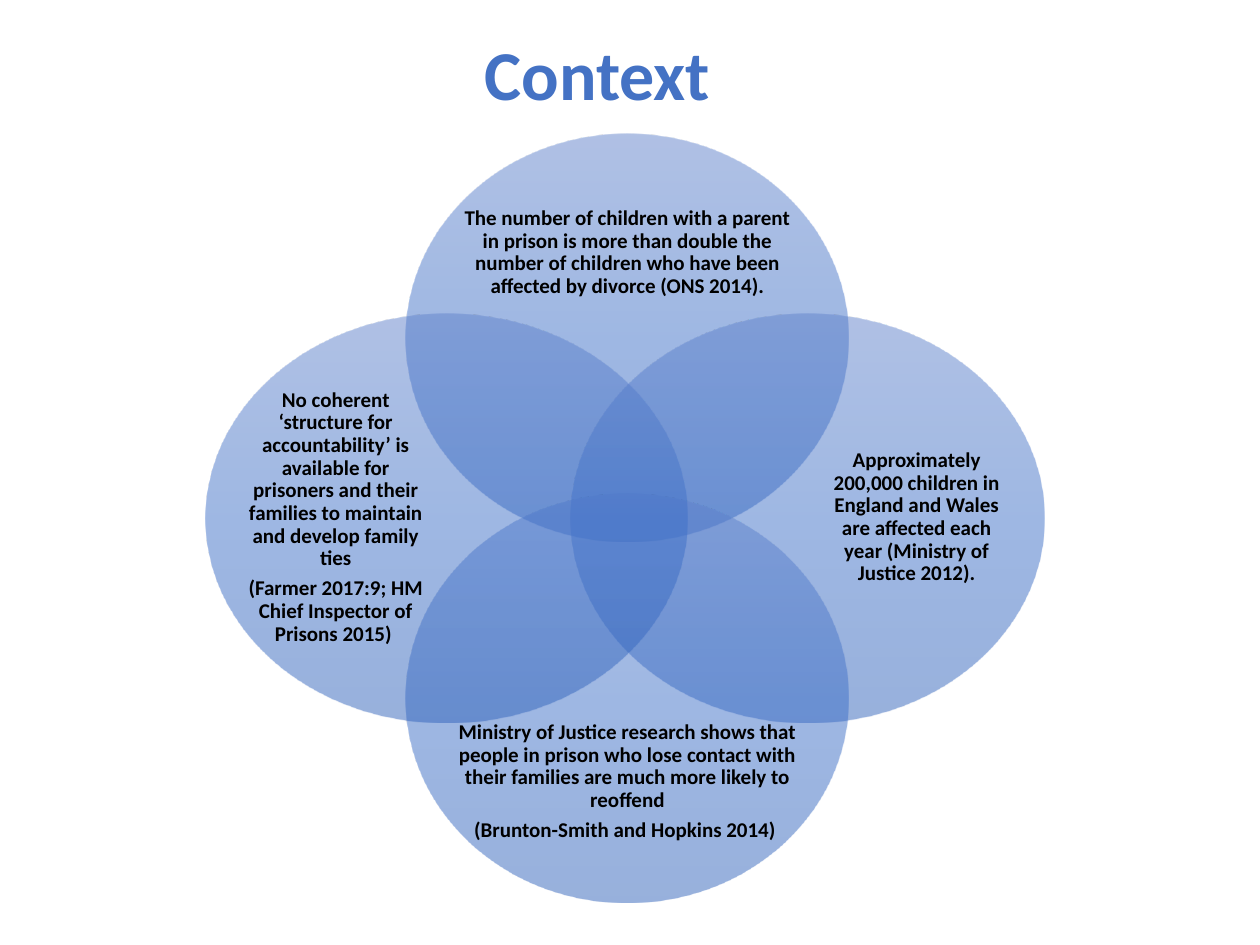
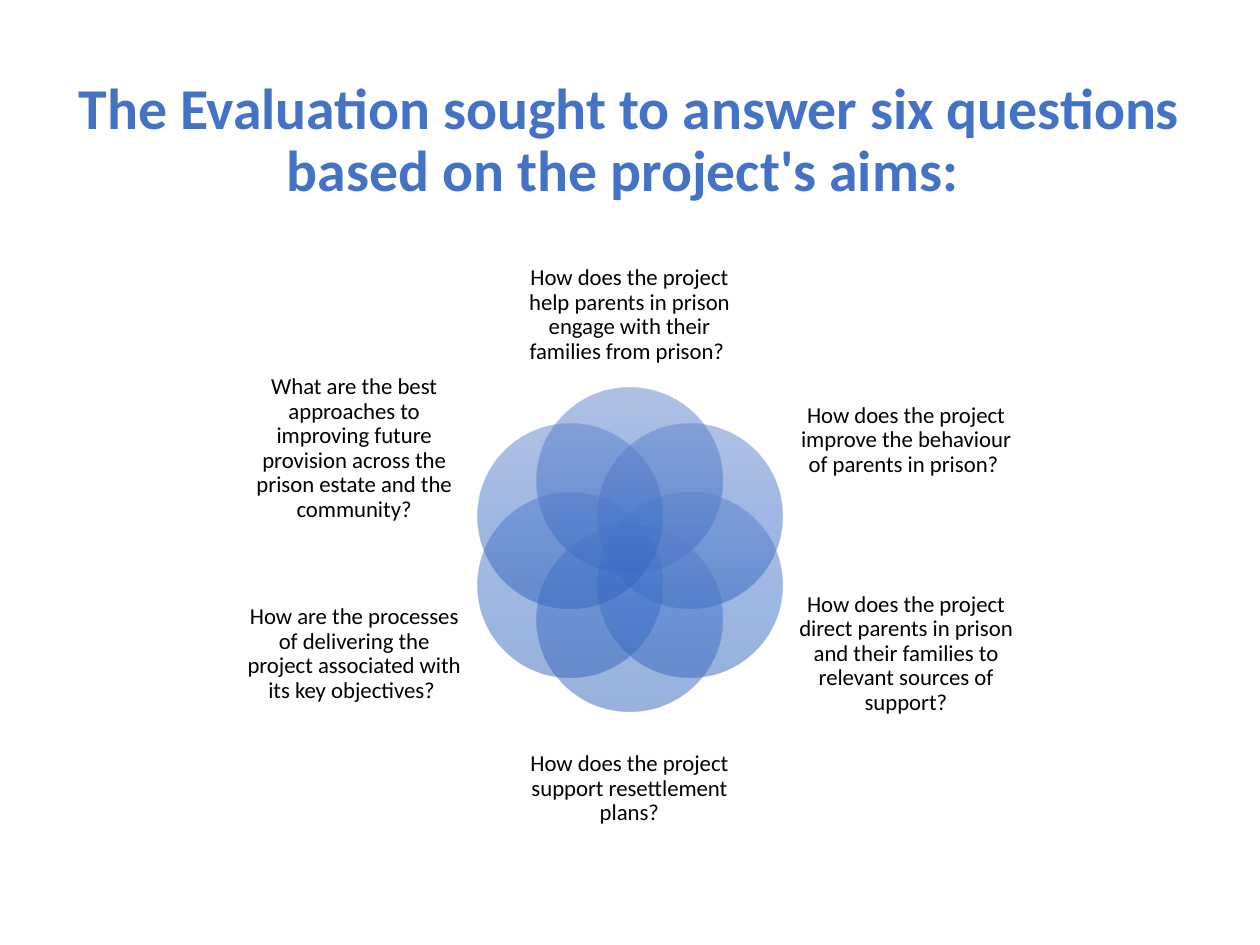
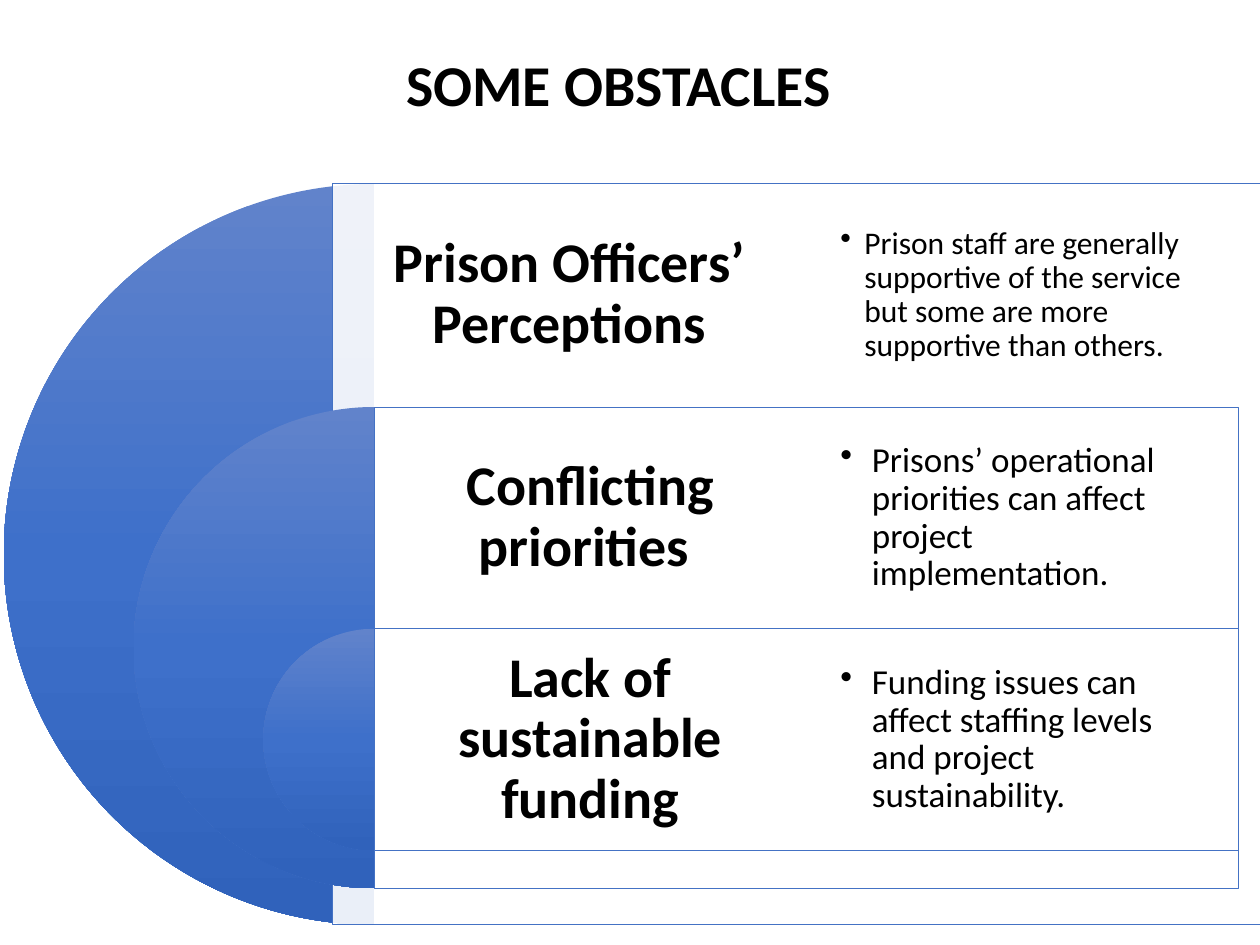
from dataclasses import dataclass
from math import cos, radians, sin

from lxml.etree import SubElement
from pptx import Presentation
from pptx.dml.color import RGBColor
from pptx.enum.shapes import MSO_SHAPE
from pptx.enum.text import MSO_ANCHOR, MSO_AUTO_SIZE, PP_ALIGN
from pptx.oxml.ns import qn
from pptx.shapes.autoshape import Shape
from pptx.slide import Slide
from pptx.text.text import TextFrame
from pptx.util import Pt

EMU_PER_PX = 9144  # 100 px to the inch
TITLE_ONLY = 5


@dataclass(frozen=True)
class Theme:
    font: str = "Calibri"
    accent: str = "4472C4"
    ink: str = "000000"
    panel: str = "FFFFFF"
    gradient: tuple[str, ...] = ("6183CB", "3E70CA", "3062BB")
    petal_opacity: int = 50
    panel_opacity: int = 90
    line_spacing: float = 0.9
    panel_line: float = 0.5
    title_large: int = 40
    title_medium: int = 33
    obstacle: int = 32
    question: int = 13
    fact: int = 12


THEME = Theme()


@dataclass(frozen=True)
class Box:
    left: int
    top: int
    width: int
    height: int

    def emu(self) -> tuple[int, ...]:
        return tuple(px(value) for value in (self.left, self.top, self.width, self.height))


@dataclass(frozen=True)
class Petal:
    """One circle of a Venn diagram with its caption."""
    circle: Box
    caption_box: Box
    paragraphs: tuple[str, ...]


@dataclass(frozen=True)
class Obstacle:
    name: str
    detail: str
    diameter: int
    top: int
    panel_left: int
    panel_width: int
    detail_box: Box
    detail_size: int
    indent: int


FACTS = (
    Petal(Box(322, 106, 351, 324), Box(363, 149, 270, 103), (
        "The number of children with a parent in prison is more than double the number "
        "of children who have been affected by divorce (ONS 2014).",)),
    Petal(Box(453, 249, 376, 324), Box(655, 286, 145, 249), (
        "Approximately 200,000 children in England and Wales are affected each year "
        "(Ministry of Justice 2012).",)),
    Petal(Box(322, 392, 351, 324), Box(363, 569, 270, 103), (
        "Ministry of Justice research shows that people in prison who lose contact with "
        "their families are much more likely to reoffend",
        "(Brunton-Smith and Hopkins 2014) ")),
    Petal(Box(163, 249, 383, 324), Box(193, 286, 147, 249), (
        "No coherent ‘structure for accountability’ is available for prisoners and their "
        "families to maintain and develop family ties",
        "(Farmer 2017:9; HM Chief Inspector of Prisons 2015) ")),
)

# Clockwise from the top
QUESTIONS = (
    (Box(408, 200, 183, 100),
     "How does the project help parents in prison engage with their families from prison? "),
    (Box(632, 295, 174, 109),
     "How does the project improve the behaviour of parents in prison? "),
    (Box(632, 458, 174, 122),
     "How does the project direct parents in prison and their families to relevant "
     "sources of support?"),
    (Box(408, 576, 183, 100), "How does the project support resettlement plans?"),
    (Box(194, 458, 174, 122),
     "How are the processes of delivering the project associated with its key objectives? "),
    (Box(194, 295, 174, 122),
     "What are the best approaches to improving future provision across the prison "
     "estate and the community?"),
)

PIE_CENTRE = 297
DETAIL_LEFT = 640
OBSTACLES = (
    Obstacle("Prison Officers’ Perceptions",
             "Prison staff are generally supportive of the service but some are more "
             "supportive than others.",
             588, 146, 264, 752, Box(DETAIL_LEFT, 136, 343, 197), 18, 19),
    Obstacle("Conflicting priorities ",
             "Prisons’ operational priorities can affect project implementation.",
             382, 323, PIE_CENTRE, 686, Box(DETAIL_LEFT, 323, 343, 176), 20, 25),
    Obstacle("Lack of sustainable funding",
             "Funding issues can affect staffing levels and project sustainability.",
             176, 499, PIE_CENTRE, 686, Box(DETAIL_LEFT, 499, 343, 176), 20, 25),
)


def px(value: int) -> int:
    return value * EMU_PER_PX


def write_text(frame: TextFrame, *paragraphs: str, size: int, color: str = THEME.ink,
               bold: bool = False, align: PP_ALIGN = PP_ALIGN.CENTER,
               space_after: float = 0, bullet_indent: int = 0) -> None:
    """Fill a text frame; space_after is a share of the type size."""
    frame.word_wrap = True
    frame.auto_size = MSO_AUTO_SIZE.NONE
    frame.vertical_anchor = MSO_ANCHOR.MIDDLE
    for index, text in enumerate(paragraphs):
        paragraph = frame.add_paragraph() if index else frame.paragraphs[0]
        paragraph.alignment = align
        paragraph.line_spacing = THEME.line_spacing
        paragraph.space_after = Pt(size * space_after)
        if bullet_indent:
            properties = paragraph._p.get_or_add_pPr()
            properties.set("marL", str(px(bullet_indent)))
            properties.set("indent", str(-px(bullet_indent)))
            SubElement(properties, qn("a:buChar"), char="•")
        run = paragraph.add_run()
        run.text = text
        run.font.name = THEME.font
        run.font.size = Pt(size)
        run.font.bold = bold
        run.font.color.rgb = RGBColor.from_string(color)


def add_text(slide: Slide, box: Box, *paragraphs: str, inset: int = 0, **text_format) -> None:
    frame = slide.shapes.add_textbox(*box.emu()).text_frame
    frame.margin_left = frame.margin_right = px(inset)
    frame.margin_top = frame.margin_bottom = px(inset)
    write_text(frame, *paragraphs, **text_format)


def add_titled_slide(presentation: Presentation, title: str, box: Box, size: int,
                     color: str) -> Slide:
    slide = presentation.slides.add_slide(presentation.slide_layouts[TITLE_ONLY])
    shape = slide.shapes.title
    shape.left, shape.top, shape.width, shape.height = box.emu()
    write_text(shape.text_frame, title, size=size, color=color, bold=True)
    return slide


def set_opacity(color_element, percent: int) -> None:
    SubElement(color_element, qn("a:alpha"), val=str(percent * 1000))


def add_gradient_shape(slide: Slide, kind: MSO_SHAPE, box: Box, opacity: int = 100) -> Shape:
    """Add an unlined shape that shades from top to bottom."""
    shape = slide.shapes.add_shape(kind, *box.emu())
    shape.shadow.inherit = False
    shape.line.fill.background()
    shape.fill.gradient()
    gradient = shape._element.spPr.find(qn("a:gradFill"))
    stops = gradient.find(qn("a:gsLst"))
    for stop in list(stops):
        stops.remove(stop)
    for index, color in enumerate(THEME.gradient):
        stop = SubElement(stops, qn("a:gs"), pos=str(index * 50000))
        color_element = SubElement(stop, qn("a:srgbClr"), val=color)
        if opacity < 100:
            set_opacity(color_element, opacity)
    shape.fill.gradient_angle = 270
    return shape


def add_panel(slide: Slide, box: Box) -> None:
    panel = slide.shapes.add_shape(MSO_SHAPE.RECTANGLE, *box.emu())
    panel.shadow.inherit = False
    panel.fill.solid()
    panel.fill.fore_color.rgb = RGBColor.from_string(THEME.panel)
    fill = panel._element.spPr.find(qn("a:solidFill"))
    set_opacity(fill.find(qn("a:srgbClr")), THEME.panel_opacity)
    panel.line.color.rgb = RGBColor.from_string(THEME.accent)
    panel.line.width = Pt(THEME.panel_line)


def draw_petals(slide: Slide, petals: tuple[Petal, ...], size: int, bold: bool) -> None:
    for petal in petals:
        add_gradient_shape(slide, MSO_SHAPE.OVAL, petal.circle, THEME.petal_opacity)
        add_text(slide, petal.caption_box, *petal.paragraphs, size=size, bold=bold,
                 space_after=0.35)


def question_petals() -> tuple[Petal, ...]:
    """Space the question circles evenly around a ring."""
    centre_x, centre_y, ring, diameter = 500, 437, 55, 147
    petals = []
    for index, (caption_box, question) in enumerate(QUESTIONS):
        angle = radians(index * 360 / len(QUESTIONS) - 90)
        left = round(centre_x + ring * cos(angle) - diameter / 2)
        top = round(centre_y + ring * sin(angle) - diameter / 2)
        petals.append(Petal(Box(left, top, diameter, diameter), caption_box, (question,)))
    return tuple(petals)


def draw_obstacles(slide: Slide) -> None:
    row_height = 176
    for item in OBSTACLES:
        pie_box = Box(PIE_CENTRE - item.diameter // 2, item.top, item.diameter, item.diameter)
        pie = add_gradient_shape(slide, MSO_SHAPE.PIE, pie_box)
        # Left half: from 90 to 270 degrees
        pie.adjustments[0], pie.adjustments[1] = 54, 162
        add_panel(slide, Box(item.panel_left, item.top, item.panel_width, item.diameter))
        name_box = Box(item.panel_left, item.top, DETAIL_LEFT - item.panel_left, row_height)
        add_text(slide, name_box, item.name, inset=13, size=THEME.obstacle, bold=True,
                 space_after=0.35)
    for item in OBSTACLES:
        add_text(slide, item.detail_box, item.detail, inset=27, size=item.detail_size,
                 align=PP_ALIGN.LEFT, space_after=0.15, bullet_indent=item.indent)


def main() -> None:
    presentation = Presentation()
    presentation.slide_width, presentation.slide_height = px(1000), px(750)

    context = add_titled_slide(presentation, "Context", Box(43, -11, 862, 145),
                               THEME.title_large, THEME.accent)
    draw_petals(context, FACTS, THEME.fact, bold=True)

    evaluation = add_titled_slide(
        presentation,
        "The Evaluation sought to answer six questions based on the project's aims: ",
        Box(35, 40, 929, 145), THEME.title_medium, THEME.accent)
    draw_petals(evaluation, question_petals(), THEME.question, bold=False)

    obstacles = add_titled_slide(presentation, "SOME OBSTACLES ", Box(65, 15, 862, 110),
                                 THEME.title_medium, THEME.ink)
    draw_obstacles(obstacles)

    presentation.save("out.pptx")


if __name__ == "__main__":
    main()
